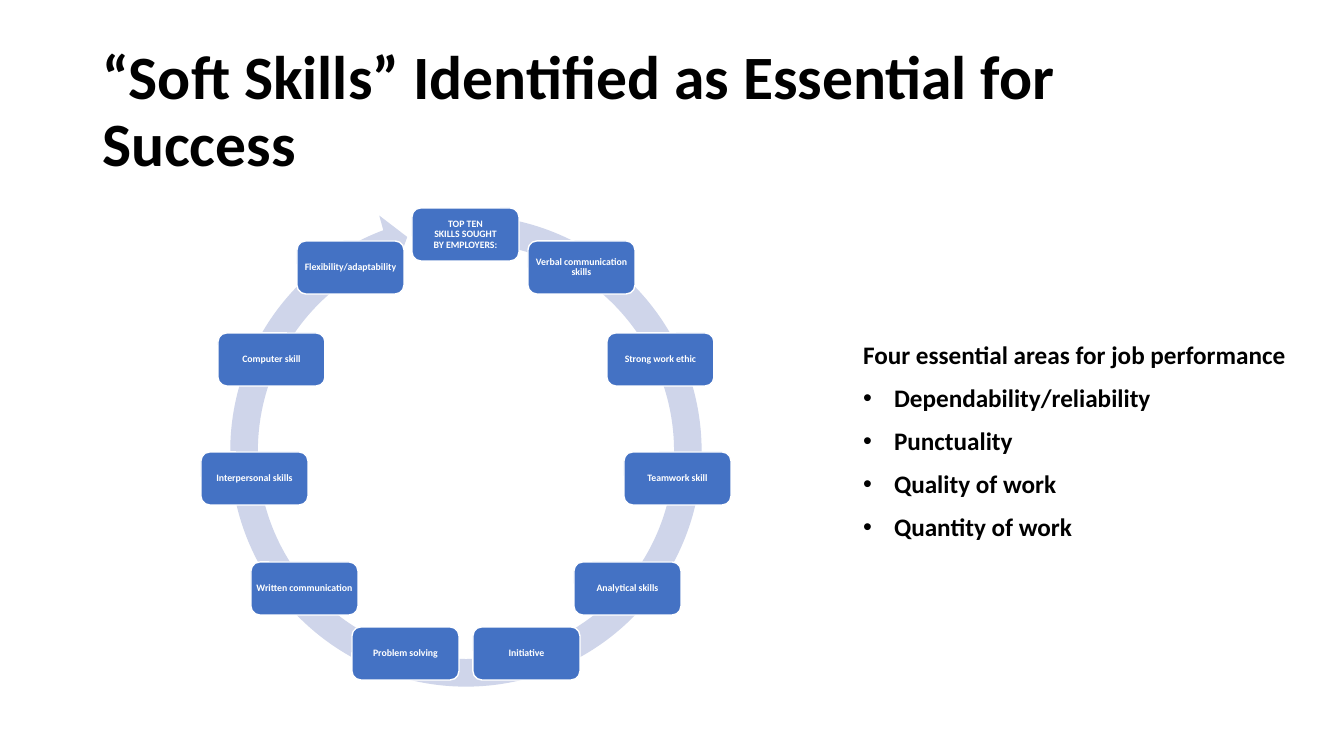
from math import cos, pi, sin

from lxml.etree import SubElement
from pptx import Presentation
from pptx.dml.color import RGBColor
from pptx.enum.shapes import MSO_SHAPE
from pptx.enum.text import MSO_ANCHOR, MSO_AUTO_SIZE, PP_ALIGN
from pptx.oxml.ns import qn
from pptx.util import Inches, Pt

PX = Inches(1) / 100.8
COLORS = {"text": "000000", "ring": "CFD5EA", "skill": "4472C4", "white": "FFFFFF"}


def px(*lengths):
    return [round(length * PX) for length in lengths]


def style(target, color, **values):
    values = {"name": "Calibri", "bold": True, **values}
    for key, value in values.items():
        setattr(target.font, key, value)
    target.font.color.rgb = RGBColor.from_string(COLORS[color])


prs = Presentation()
prs.slide_width, prs.slide_height = px(1344, 756)
slide = prs.slides.add_slide(prs.slide_layouts[1])
title, areas = slide.placeholders

# Title
title.left, title.top, title.width, title.height = px(92, 40, 1159, 146)
title.text_frame.text = "“Soft Skills” Identified as\u00a0Essential for Success"
title.text_frame.auto_size = MSO_AUTO_SIZE.NONE
title.text_frame.vertical_anchor = MSO_ANCHOR.MIDDLE
heading = title.text_frame.paragraphs[0]
heading.alignment = PP_ALIGN.LEFT
heading.line_spacing = 0.9
style(heading, "text", size=Pt(44))

# Circular arrow behind the skills
ring = slide.shapes.add_shape(MSO_SHAPE.CIRCULAR_ARROW, *px(215, 200, 502, 502))
ring.shadow.inherit = False
ring.fill.solid()
ring.fill.fore_color.rgb = RGBColor.from_string(COLORS["ring"])
ring.line.fill.background()
for index, value in enumerate([0.055, 3.307, 149.49, 167.058, 0.058]):
    ring.adjustments[index] = value

# Skills, evenly spaced clockwise from the top
skills = [
    "TOP TEN SKILLS\u00a0SOUGHT BY\u00a0EMPLOYERS:",
    "Verbal communication skills",
    "Strong work ethic",
    "Teamwork skill",
    "Analytical skills",
    "Initiative",
    "Problem solving",
    "Written communication",
    "Interpersonal skills",
    "Computer skill",
    "Flexibility/adaptability",
]
CENTER_X, CENTER_Y, RADIUS = 466, 448, 214
SKILL_W, SKILL_H = 107, 53
for index, skill in enumerate(skills):
    angle = 2 * pi * index / len(skills)
    left = round(CENTER_X + RADIUS * sin(angle) - SKILL_W / 2)
    top = round(CENTER_Y - RADIUS * cos(angle) - SKILL_H / 2)
    box = slide.shapes.add_shape(
        MSO_SHAPE.ROUNDED_RECTANGLE, *px(left, top, SKILL_W, SKILL_H))
    box.shadow.inherit = False
    box.fill.solid()
    box.fill.fore_color.rgb = RGBColor.from_string(COLORS["skill"])
    box.line.color.rgb = RGBColor.from_string(COLORS["white"])
    box.line.width = Pt(1)
    frame = box.text_frame
    frame.text = skill
    inset = px(2)[0]
    for key, value in {
        "margin_left": inset, "margin_right": inset,
        "margin_top": inset, "margin_bottom": inset,
        "word_wrap": True, "vertical_anchor": MSO_ANCHOR.MIDDLE,
    }.items():
        setattr(frame, key, value)
    label = frame.paragraphs[0]
    label.alignment = PP_ALIGN.CENTER
    label.line_spacing = 0.9
    style(label, "white", size=Pt(7))

# Areas of job performance
areas.left, areas.top, areas.width, areas.height = px(853, 334, 598, 221)
areas.text_frame.text = "\n".join([
    "Four essential areas for job\u00a0performance",
    "Dependability/reliability",
    "Punctuality",
    "Quality of work",
    "Quantity of work",
])
areas.text_frame.auto_size = MSO_AUTO_SIZE.SHAPE_TO_FIT_TEXT
indent = px(31)[0]
for index, area in enumerate(areas.text_frame.paragraphs):
    is_lead = index == 0
    area.space_before = Pt(0 if is_lead else 3.2)
    area.space_after = Pt(6)
    props = area._p.get_or_add_pPr()
    props.set("marL", str(0 if is_lead else indent))
    props.set("indent", str(0 if is_lead else -indent))
    if is_lead:
        SubElement(props, qn("a:buNone"))
    else:
        SubElement(props, qn("a:buFont"), typeface="Arial")
        SubElement(props, qn("a:buChar"), char="•")
    style(area, "text", size=Pt(18))

prs.save("out.pptx")
